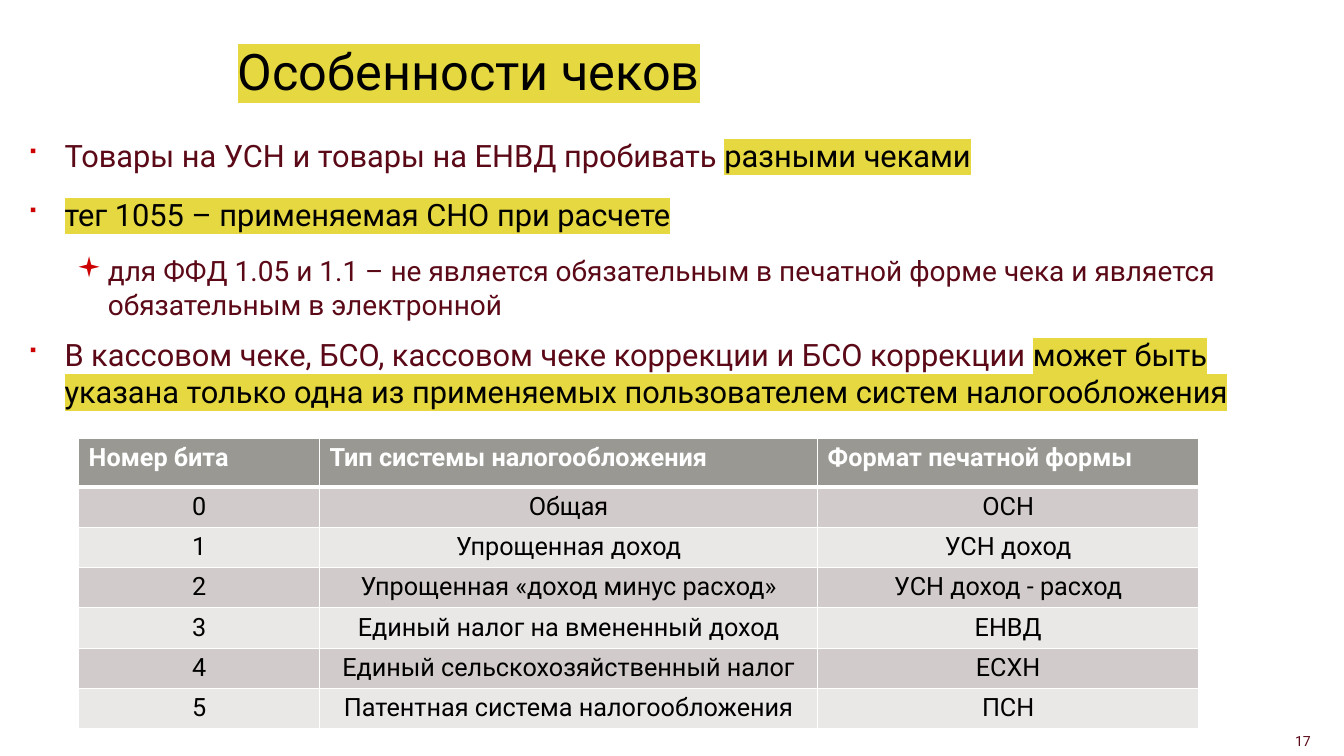
import pptx
import pptx.dml.color
import pptx.enum.text
import pptx.oxml.ns
import pptx.util
from lxml import etree

Inches = pptx.util.Inches
Pt = pptx.util.Pt
ALIGN = pptx.enum.text.PP_ALIGN
ANCHOR = pptx.enum.text.MSO_ANCHOR
FONT = "Roboto"
BLACK, WHITE, WINE, RED, YELLOW = "000000", "FFFFFF", "5B0917", "CC0000", "E5D841"
HEADER_FILL, BAND_FILLS = "999893", ("D2CBCB", "EAE7E7")

BULLETS = [
    (0, 0, [("Товары на УСН и товары на ЕНВД пробивать ", False), ("разными чеками", True)]),
    (0, 15.4, [("тег 1055 – применяемая СНО при расчете", True)]),
    (1, 15, [("для ФФД 1.05 и 1.1 – не является обязательным в печатной форме чека "
              "и является обязательным в электронной", False)]),
    (0, 10.4, [("В кассовом чеке, БСО, кассовом чеке коррекции и БСО коррекции ", False),
               ("может быть указана только одна из применяемых пользователем "
                "систем налогообложения", True)]),
]
LEVELS = [
    {"size": 22, "left": 0.38, "hang": 0.38, "mark": "■"},
    {"size": 20, "left": 0.81, "hang": 0.31, "mark": "▪"},
]
TAX_ROWS = [
    ("Номер бита", "Тип системы налогообложения", "Формат печатной формы"),
    ("0", "Общая", "ОСН"),
    ("1", "Упрощенная доход", "УСН доход"),
    ("2", "Упрощенная «доход минус расход»", "УСН доход - расход"),
    ("3", "Единый налог на вмененный доход", "ЕНВД"),
    ("4", "Единый сельскохозяйственный налог", "ЕСХН"),
    ("5", "Патентная система налогообложения", "ПСН"),
]


def rgb(value):
    """Return the colour for a hex string."""
    return pptx.dml.color.RGBColor.from_string(value)


def add_element(parent, tag, **attributes):
    """Append a DrawingML element and return it."""
    return etree.SubElement(parent, pptx.oxml.ns.qn(f"a:{tag}"), attributes)


def add_text(paragraph, text, size=18, color=BLACK, bold=False, highlight=None):
    """Add a formatted run to a paragraph."""
    run = paragraph.add_run()
    run.text = text
    run.font.size = Pt(size)
    run.font.bold = bold
    run.font.color.rgb = rgb(color)
    if highlight:
        marker = add_element(run.font._element, "highlight")
        add_element(marker, "srgbClr", val=highlight)
    run.font.name = FONT


def place(shape, left, top, width, height):
    """Move and size a shape, in inches."""
    shape.left, shape.top = Inches(left), Inches(top)
    shape.width, shape.height = Inches(width), Inches(height)
    shape.text_frame.word_wrap = True
    shape.text_frame.auto_size = pptx.enum.text.MSO_AUTO_SIZE.NONE


def set_bullet(paragraph, left, hang, mark):
    """Give a paragraph its indent and bullet."""
    properties = paragraph._p.get_or_add_pPr()
    properties.set("marL", str(Inches(left)))
    properties.set("indent", str(-Inches(hang)))
    add_element(add_element(properties, "buClr"), "srgbClr", val=RED)
    add_element(properties, "buFont", typeface="Wingdings")
    add_element(properties, "buChar", char=mark)


def set_borders(cell, **widths):
    """Draw white cell borders with widths in points."""
    properties = cell._tc.get_or_add_tcPr()
    for position, (side, width) in enumerate(widths.items()):
        line = add_element(properties, f"ln{side}", w=str(Pt(width)))
        add_element(add_element(line, "solidFill"), "srgbClr", val=WHITE)
        properties.insert(position, line)


def fill_title(shape, *box):
    """Write the highlighted slide title."""
    place(shape, *box)
    shape.text_frame.vertical_anchor = ANCHOR.MIDDLE
    paragraph = shape.text_frame.paragraphs[0]
    paragraph.alignment = ALIGN.LEFT
    paragraph.line_spacing = 0.8
    add_text(paragraph, "Особенности чеков", size=36, highlight=YELLOW)


def fill_body(shape, *box):
    """Write the bulleted list."""
    place(shape, *box)
    frame = shape.text_frame
    for index, (level, space, parts) in enumerate(BULLETS):
        paragraph = frame.add_paragraph() if index else frame.paragraphs[0]
        style = LEVELS[level]
        paragraph.level = level
        set_bullet(paragraph, style["left"], style["hang"], style["mark"])
        paragraph.space_before = Pt(space)
        for text, marked in parts:
            add_text(paragraph, text, size=style["size"], color=BLACK if marked else WINE,
                     highlight=YELLOW if marked else None)


def add_tax_table(slide, left, top, widths, header_height, row_height):
    """Add the table of tax systems."""
    height = header_height + row_height * (len(TAX_ROWS) - 1)
    table = slide.shapes.add_table(len(TAX_ROWS), len(widths), Inches(left), Inches(top),
                                   Inches(sum(widths)), Inches(height)).table
    for column, width in zip(table.columns, widths):
        column.width = Inches(width)
    for index, values in enumerate(TAX_ROWS):
        header = index == 0
        table.rows[index].height = Inches(header_height if header else row_height)
        for column, value in enumerate(values):
            cell = table.cell(index, column)
            cell.fill.solid()
            cell.fill.fore_color.rgb = rgb(HEADER_FILL if header else BAND_FILLS[(index - 1) % 2])
            set_borders(cell, L=1, R=1, T=3 if index == 1 else 1, B=3 if header else 1)
            paragraph = cell.text_frame.paragraphs[0]
            paragraph.alignment = ALIGN.LEFT if header else ALIGN.CENTER
            add_text(paragraph, value, color=WHITE if header else BLACK, bold=header)


def add_page_number(slide, *box):
    """Add the slide number at the lower right."""
    shape = slide.shapes.add_textbox(*map(Inches, box))
    place(shape, *box)
    paragraph = shape.text_frame.paragraphs[0]
    paragraph.alignment = ALIGN.RIGHT
    add_text(paragraph, "17", size=10, color=WINE)


def main():
    """Build and save the presentation."""
    presentation = pptx.Presentation()
    presentation.slide_width, presentation.slide_height = Inches(13.33), Inches(7.5)
    slide = presentation.slides.add_slide(presentation.slide_layouts[1])
    fill_title(slide.shapes.title, 2.26, 0.36, 7.14, 0.79)
    fill_body(slide.placeholders[1], 0.16, 1.31, 13.02, 5.83)
    add_page_number(slide, 12.26, 7.22, 0.84, 0.28)
    add_tax_table(slide, 0.78, 4.35, (2.39, 4.94, 3.78), 0.48, 0.4)
    presentation.save("out.pptx")


if __name__ == "__main__":
    main()
